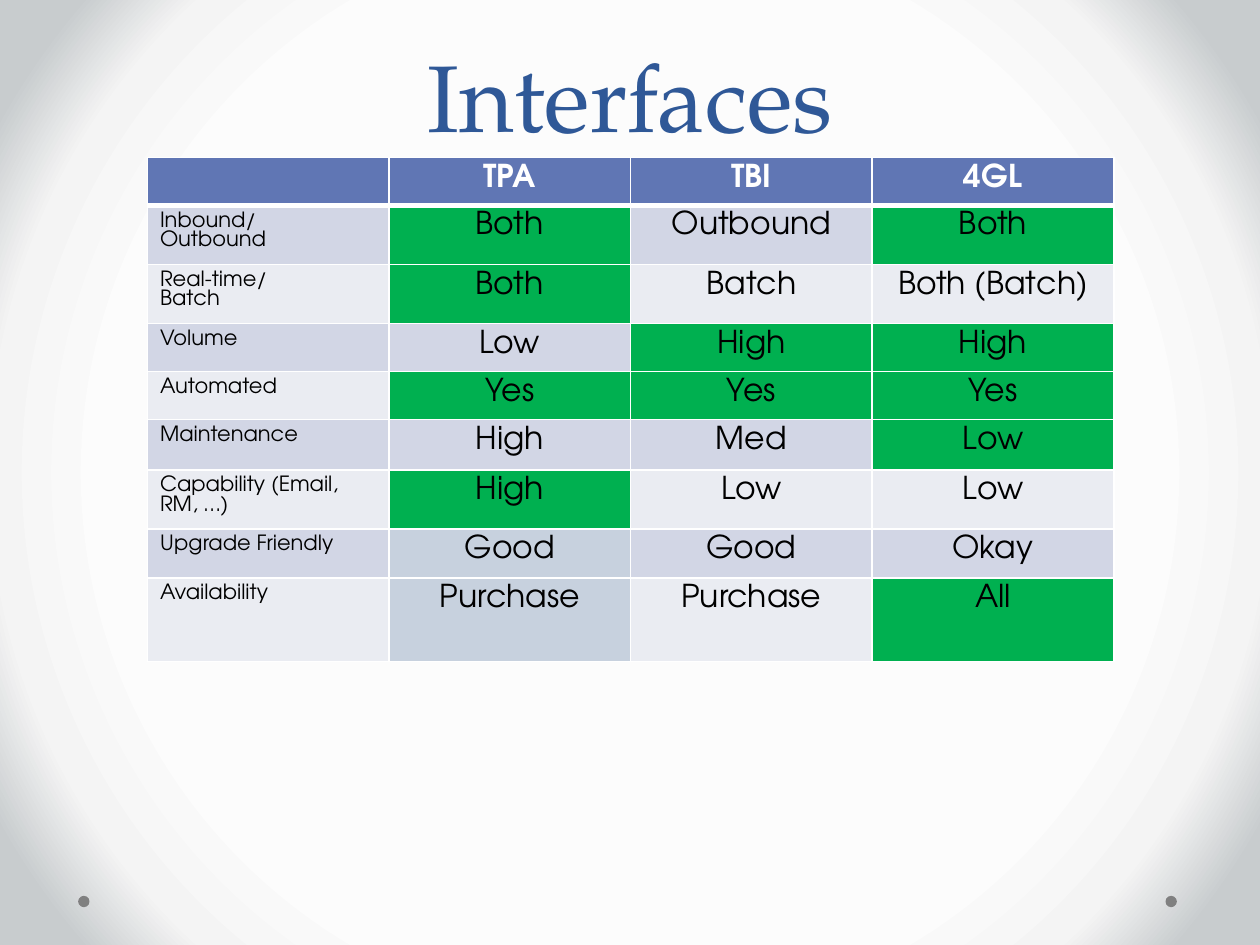
from lxml import etree
from pptx import Presentation
from pptx import oxml
from pptx import util as u
from pptx.dml.color import RGBColor
from pptx.enum import shapes, text
from pptx.oxml import ns

WHITE = RGBColor(0xFF, 0xFF, 0xFF)
BLACK = RGBColor(0, 0, 0)
GRAY = RGBColor(0x80, 0x80, 0x80)
TITLE_BLUE = RGBColor(0x2F, 0x58, 0x97)
HEADER_BLUE = RGBColor(0x60, 0x76, 0xB4)
BAND_DARK = RGBColor(0xD2, 0xD6, 0xE5)
BAND_LIGHT = RGBColor(0xEA, 0xEC, 0xF2)
GREEN = RGBColor(0x00, 0xB0, 0x50)
STEEL = RGBColor(0xC7, 0xD1, 0xDE)
GLOW = [
    (66, RGBColor(0xFC, 0xFC, 0xFC)),
    (81, RGBColor(0xF4, 0xF4, 0xF4)),
    (92, RGBColor(0xC8, 0xCC, 0xCE)),
]

HEADERS = ["", "TPA", "TBI", "4GL"]
ROWS = [
    ["Inbound/\nOutbound", "Both", "Outbound", "Both"],
    ["Real-time/\nBatch", "Both", "Batch", "Both (Batch)"],
    ["Volume", "Low", "High", "High"],
    ["Automated", "Yes", "Yes", "Yes"],
    ["Maintenance", "High", "Med", "Low"],
    ["Capability (Email, RM, …)", "High", "Low", "Low"],
    ["Upgrade Friendly", "Good", "Good", "Okay"],
    ["Availability", "Purchase", "Purchase", "All"],
]
ROW_HEIGHTS = [0.38, 0.47, 0.47, 0.38, 0.38, 0.4, 0.47, 0.39, 0.66]
HIGHLIGHTS = {
    GREEN: [(1, 1), (1, 3), (2, 1), (3, 2), (3, 3), (4, 1), (4, 2), (4, 3),
            (5, 3), (6, 1), (8, 3)],
    STEEL: [(7, 1), (8, 1)],
}
CELL_COLORS = {place: color for color, places in HIGHLIGHTS.items() for place in places}


class SlideBuilder:
    title_font = "TeX Gyre Pagella"
    body_font = "TeX Gyre Adventor"

    def __init__(self, slide):
        self.slide = slide

    def background(self, stops):
        stop_xml = "".join(
            f'<a:gs pos="{position * 1000}"><a:srgbClr val="{color}"/></a:gs>'
            for position, color in stops
        )
        background = oxml.parse_xml(
            f'<p:bg {ns.nsdecls("p", "a")}><p:bgPr><a:gradFill rotWithShape="1">'
            f'<a:gsLst>{stop_xml}</a:gsLst><a:path path="circle">'
            '<a:fillToRect l="50000" t="50000" r="50000" b="50000"/></a:path>'
            '</a:gradFill><a:effectLst/></p:bgPr></p:bg>'
        )
        self.slide.element.cSld.insert(0, background)

    def dot(self, left, top, size):
        shape = self.slide.shapes.add_shape(
            shapes.MSO_SHAPE.OVAL, u.Inches(left), u.Inches(top), u.Inches(size), u.Inches(size)
        )
        shape.shadow.inherit = False
        shape.fill.solid()
        shape.fill.fore_color.rgb = GRAY
        shape.line.fill.background()

    def run(self, paragraph, words, font, size, color, bold=False):
        run = paragraph.add_run()
        run.text = words
        run.font.name = font
        run.font.size = u.Pt(size)
        run.font.color.rgb = color
        run.font.bold = bold

    def title(self, words, left, top, width, height):
        shape = self.slide.shapes.add_textbox(
            u.Inches(left), u.Inches(top), u.Inches(width), u.Inches(height)
        )
        frame = shape.text_frame
        frame.word_wrap = True
        frame.vertical_anchor = text.MSO_ANCHOR.BOTTOM
        paragraph = frame.paragraphs[0]
        paragraph.alignment = text.PP_ALIGN.CENTER
        paragraph.line_spacing = u.Pt(58)
        self.run(paragraph, words, self.title_font, 54, TITLE_BLUE)

    def borders(self, cell, top, bottom):
        properties = cell._tc.get_or_add_tcPr()
        for side, width in (("L", 1), ("R", 1), ("T", top), ("B", bottom)):
            line = etree.SubElement(properties, ns.qn(f"a:ln{side}"), w=str(u.Pt(width)))
            fill = etree.SubElement(line, ns.qn("a:solidFill"))
            etree.SubElement(fill, ns.qn("a:srgbClr"), val=str(WHITE))

    def cell(self, cell, words, row, column):
        header = row == 0
        self.borders(cell, 3 if row == 1 else 1, 3 if header else 1)
        band = HEADER_BLUE if header else BAND_DARK if row % 2 else BAND_LIGHT
        cell.fill.solid()
        cell.fill.fore_color.rgb = CELL_COLORS.get((row, column), band)
        cell.margin_bottom = u.Inches(0.01)
        if not words:
            return
        frame = cell.text_frame
        for index, line in enumerate(words.split("\n")):
            paragraph = frame.add_paragraph() if index else frame.paragraphs[0]
            if column:
                paragraph.alignment = text.PP_ALIGN.CENTER
            self.run(paragraph, line, self.body_font, 18 if column else 12,
                     WHITE if header else BLACK, header)

    def table(self, rows, heights, left, top, width):
        table = self.slide.shapes.add_table(
            len(rows), len(rows[0]), u.Inches(left), u.Inches(top),
            u.Inches(width), u.Inches(sum(heights))
        ).table
        for row, (values, height) in enumerate(zip(rows, heights)):
            table.rows[row].height = u.Inches(height)
            for column, words in enumerate(values):
                self.cell(table.cell(row, column), words, row, column)


def main():
    presentation = Presentation()
    presentation.slide_width = u.Inches(10)
    presentation.slide_height = u.Inches(7.5)
    builder = SlideBuilder(presentation.slides.add_slide(presentation.slide_layouts[6]))
    builder.background(GLOW)
    for left in (9.25, 0.62):
        builder.dot(left, 7.11, 0.09)
    builder.title("Interfaces", 0.5, 0, 9, 1.25)
    builder.table([HEADERS] + ROWS, ROW_HEIGHTS, 1.17, 1.25, 7.67)
    presentation.save("out.pptx")


if __name__ == "__main__":
    main()
